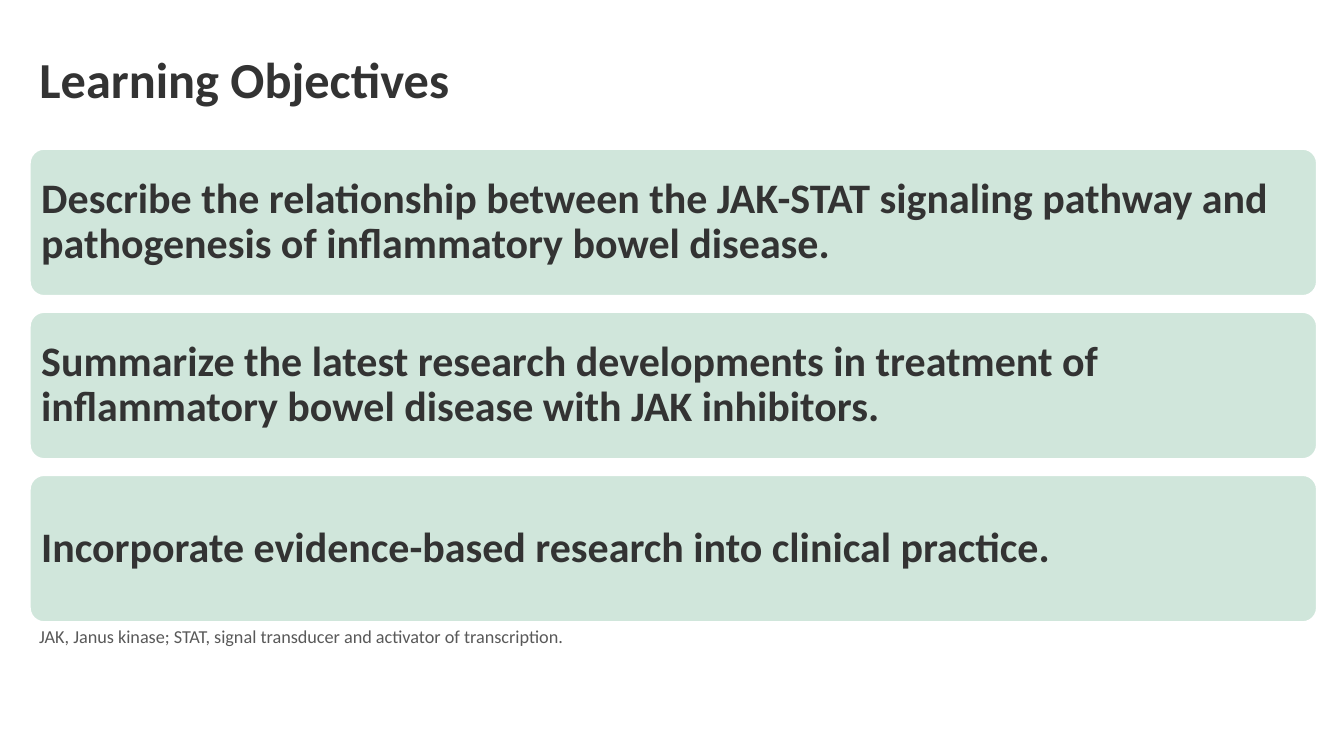
"""Build the Learning Objectives slide."""
from pptx import Presentation
from pptx.dml.color import RGBColor
from pptx.enum.shapes import MSO_SHAPE
from pptx.enum.text import MSO_ANCHOR, PP_ALIGN
from pptx.util import Cm, Pt

HEADING = "Learning Objectives"
OBJECTIVES = [
    "Describe the relationship between the JAK-STAT signaling pathway and "
    "pathogenesis of inflammatory bowel disease.",
    "Summarize the latest research developments in treatment of "
    "inflammatory bowel disease with JAK inhibitors.",
    "Incorporate evidence-based research into clinical practice.",
]
ABBREVIATIONS = "JAK, Janus kinase; STAT, signal transducer and activator of transcription."

MINT = RGBColor(0xD0, 0xE6, 0xDB)
WHITE = RGBColor(0xFF, 0xFF, 0xFF)
CHARCOAL = RGBColor(0x33, 0x33, 0x33)
GRAY = RGBColor(0x59, 0x59, 0x59)

LEFT, WIDTH = Cm(0.74), Cm(32.46)
CARD_TOP, CARD_HEIGHT, CARD_PITCH = Cm(3.74), Cm(3.73), Cm(4.11)
CARD_SIDE_INSET, CARD_END_INSET = Cm(0.19), Cm(0.19)


def write(shape, text, size, color, bold=False, anchor=MSO_ANCHOR.MIDDLE):
    frame = shape.text_frame
    frame.text = text
    frame.word_wrap = True
    frame.vertical_anchor = anchor
    paragraph = frame.paragraphs[0]
    paragraph.alignment = PP_ALIGN.LEFT
    paragraph.line_spacing = 0.9
    font = paragraph.runs[0].font
    font.name = "Calibri"
    font.size = Pt(size)
    font.bold = bold
    font.color.rgb = color


def add_objective(slide, position, objective):
    card = slide.shapes.add_shape(
        MSO_SHAPE.ROUNDED_RECTANGLE,
        LEFT, CARD_TOP + position * CARD_PITCH, WIDTH, CARD_HEIGHT)
    card.adjustments[0] = 0.1
    card.shadow.inherit = False
    card.fill.solid()
    card.fill.fore_color.rgb = MINT
    card.line.color.rgb = WHITE
    card.line.width = Pt(2)
    frame = card.text_frame
    frame.margin_left = frame.margin_right = CARD_SIDE_INSET
    frame.margin_top = frame.margin_bottom = CARD_END_INSET
    write(card, objective, 30, CHARCOAL, bold=True)


def main():
    deck = Presentation()
    deck.slide_width, deck.slide_height = Cm(33.87), Cm(19.05)
    slide = deck.slides.add_slide(deck.slide_layouts[5])

    heading = slide.shapes.title
    heading.left, heading.top = LEFT, Cm(0.48)
    heading.width, heading.height = WIDTH, Cm(3.18)
    write(heading, HEADING, 36, CHARCOAL, bold=True)

    for position, objective in enumerate(OBJECTIVES):
        add_objective(slide, position, objective)

    footnote = slide.shapes.add_textbox(LEFT, Cm(15.7), WIDTH, Cm(0.76))
    write(footnote, ABBREVIATIONS, 13, GRAY, anchor=MSO_ANCHOR.TOP)

    deck.save("out.pptx")


if __name__ == "__main__":
    main()
